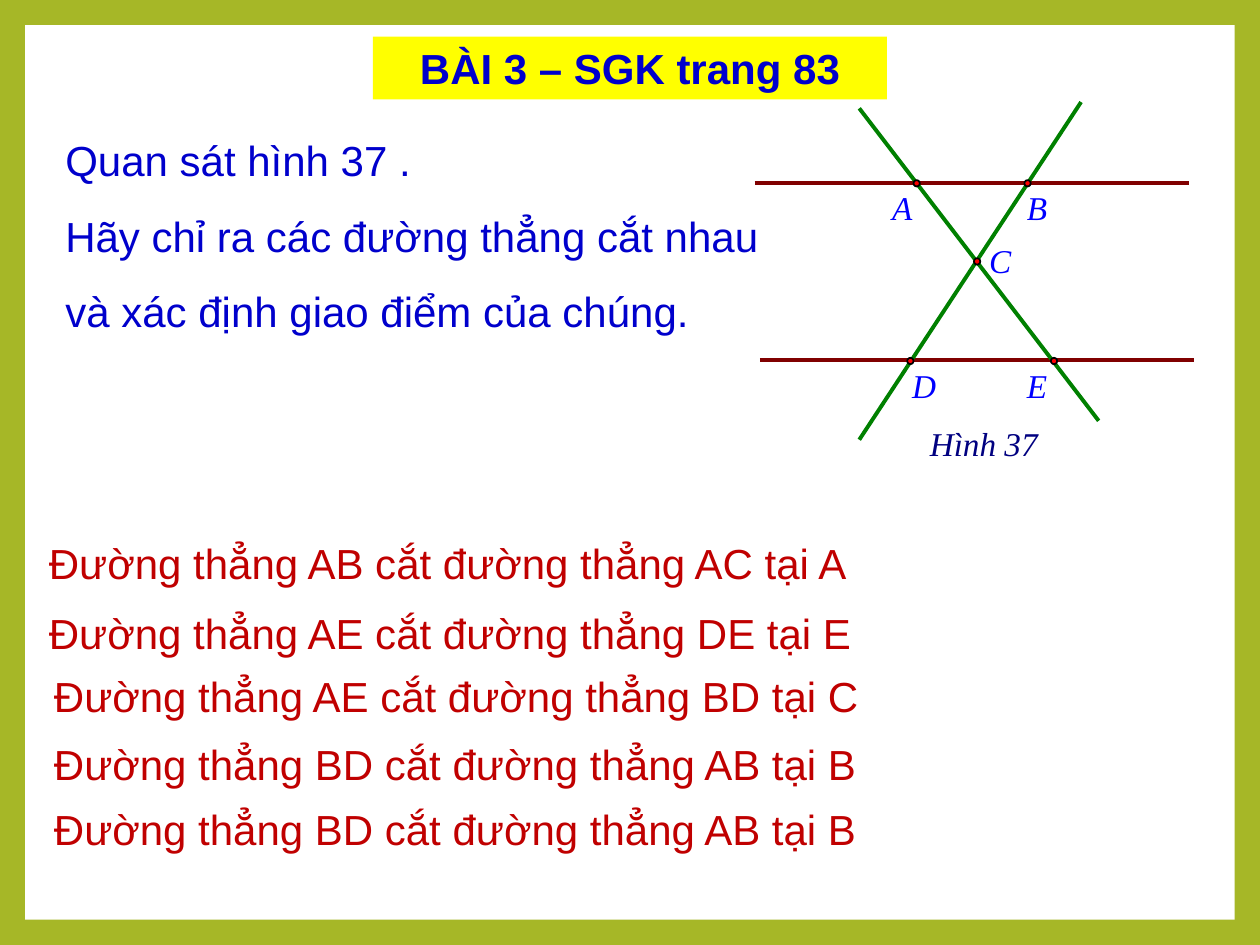
from dataclasses import dataclass

from lxml.etree import SubElement
from pptx import Presentation
from pptx.dml.color import RGBColor as Rgb
from pptx.enum.shapes import MSO_CONNECTOR as Conn, MSO_SHAPE as Form
from pptx.enum.text import MSO_ANCHOR as Anchor, MSO_AUTO_SIZE as Fit, PP_ALIGN as Align
from pptx.oxml.ns import qn
from pptx.util import Inches, Pt


@dataclass(frozen=True)
class Theme:
    back: str = "A6B727"
    panel: str = "FFFFFF"
    band: str = "FFFF00"
    task: str = "0000CC"
    answer: str = "C00000"
    level: str = "800000"
    slant: str = "008000"
    dot: str = "FF0000"
    edge: str = "000000"
    mark: str = "0000FF"
    note: str = "000080"
    sans: str = "Arial"
    serif: str = "Times New Roman"
    body: float = 24
    small: float = 19
    stroke: float = 2.25
    rim: float = 1


def color(code):
    return Rgb.from_string(code)


class Board:
    """Holds the theme and the slide being drawn."""

    def __init__(self, slide, theme):
        self.slide, self.theme = slide, theme
        fill = slide.background.fill
        fill.solid()
        fill.fore_color.rgb = color(theme.back)

    def shape(self, box, fill, form=Form.RECTANGLE, rim=None, home=None):
        item = (home or self.slide).shapes.add_shape(form, *map(Inches, box))
        item.shadow.inherit = False
        item.fill.solid()
        item.fill.fore_color.rgb = color(fill)
        if rim:
            item.line.color.rgb = color(rim)
            item.line.width = Pt(self.theme.rim)
        else:
            item.line.fill.background()
        return item

    def line(self, start, end, tone):
        item = self.slide.shapes.add_connector(Conn.STRAIGHT, *map(Inches, start + end))
        item.line.color.rgb = color(tone)
        item.line.width = Pt(self.theme.stroke)
        SubElement(item._element.spPr, qn("a:effectLst"))

    def letter(self, item, lines, tone, para=None, **font):
        """Fill a shape with body text; para and font override its format."""
        form = {"name": self.theme.sans, "size": Pt(self.theme.body), **font}
        frame = item.text_frame
        frame.text = "\n".join(lines)
        for part in frame.paragraphs:
            for key, value in (para or {}).items():
                setattr(part, key, value)
            for run in part.runs:
                run.font.color.rgb = color(tone)
                for key, value in form.items():
                    setattr(run.font, key, value)

    def text(self, box, lines, tone):
        item = self.slide.shapes.add_textbox(*map(Inches, box))
        item.text_frame.word_wrap = True
        item.text_frame.auto_size = Fit.SHAPE_TO_FIT_TEXT
        self.letter(item, lines, tone, {"line_spacing": 1.5})

    def label(self, box, word, tone, home=None):
        item = (home or self.slide).shapes.add_textbox(*map(Inches, box))
        frame = item.text_frame
        for side in ("left", "top", "right", "bottom"):
            setattr(frame, f"margin_{side}", 0)
        frame.word_wrap = False
        frame.auto_size = Fit.SHAPE_TO_FIT_TEXT
        self.letter(item, [word], tone, name=self.theme.serif,
                    size=Pt(self.theme.small), italic=True)

    def point(self, name, x, y, left, top, wide):
        group = self.slide.shapes.add_group_shape()
        self.shape((x, y, 0.05, 0.05), self.theme.dot, Form.OVAL, self.theme.edge, group)
        self.label((left, top, wide, 0.36), name, self.theme.mark, group)

    def title(self, box, words):
        item = self.shape(box, self.theme.band)
        item.text_frame.vertical_anchor = Anchor.TOP
        item.text_frame.auto_size = Fit.SHAPE_TO_FIT_TEXT
        self.letter(item, [words], self.theme.task, {"alignment": Align.CENTER}, bold=True)


TASK = ["Quan sát hình 37 .",
        "Hãy chỉ ra các đường thẳng cắt nhau và xác định giao điểm của chúng."]
LINES = [((5.99, 1.45), (9.44, 1.45), "level"),
         ((6.03, 2.86), (9.48, 2.86), "level"),
         ((6.82, 3.49), (8.58, 0.81), "slant"),
         ((6.82, 0.86), (8.72, 3.34), "slant")]
POINTS = [("E", 8.34, 2.84, 8.15, 2.9, 0.27),
          ("D", 7.2, 2.84, 7.24, 2.9, 0.3),
          ("C", 7.73, 2.05, 7.85, 1.91, 0.28),
          ("B", 8.13, 1.43, 8.15, 1.49, 0.27),
          ("A", 7.25, 1.43, 7.08, 1.49, 0.27)]
ANSWERS = [(0.29, 4.02, "AB", "AC", "A"),
           (0.29, 4.57, "AE", "DE", "E"),
           (0.33, 5.07, "AE", "BD", "C"),
           (0.33, 5.61, "BD", "AB", "B"),
           (0.33, 6.13, "BD", "AB", "B")]


def main():
    deck = Presentation()
    deck.slide_width, deck.slide_height = Inches(10), Inches(7.5)
    theme = Theme()
    board = Board(deck.slides.add_slide(deck.slide_layouts[6]), theme)

    board.shape((0.2, 0.2, 9.6, 7.1), theme.panel)
    board.text((0.42, 0.82, 5.83, 1.92), TASK, theme.task)
    board.title((2.96, 0.29, 4.08, 0.5), "BÀI 3 – SGK trang 83")
    for start, end, tone in LINES:
        board.line(start, end, getattr(theme, tone))
    board.label((7.38, 3.36, 0.96, 0.36), "Hình 37", theme.note)
    for point in POINTS:
        board.point(*point)
    for left, top, one, two, meet in ANSWERS:
        words = f"Đường thẳng {one} cắt đường thẳng {two} tại {meet}"
        board.text((left, top, 6.93, 0.71), [words], theme.answer)
    deck.save("out.pptx")


if __name__ == "__main__":
    main()
